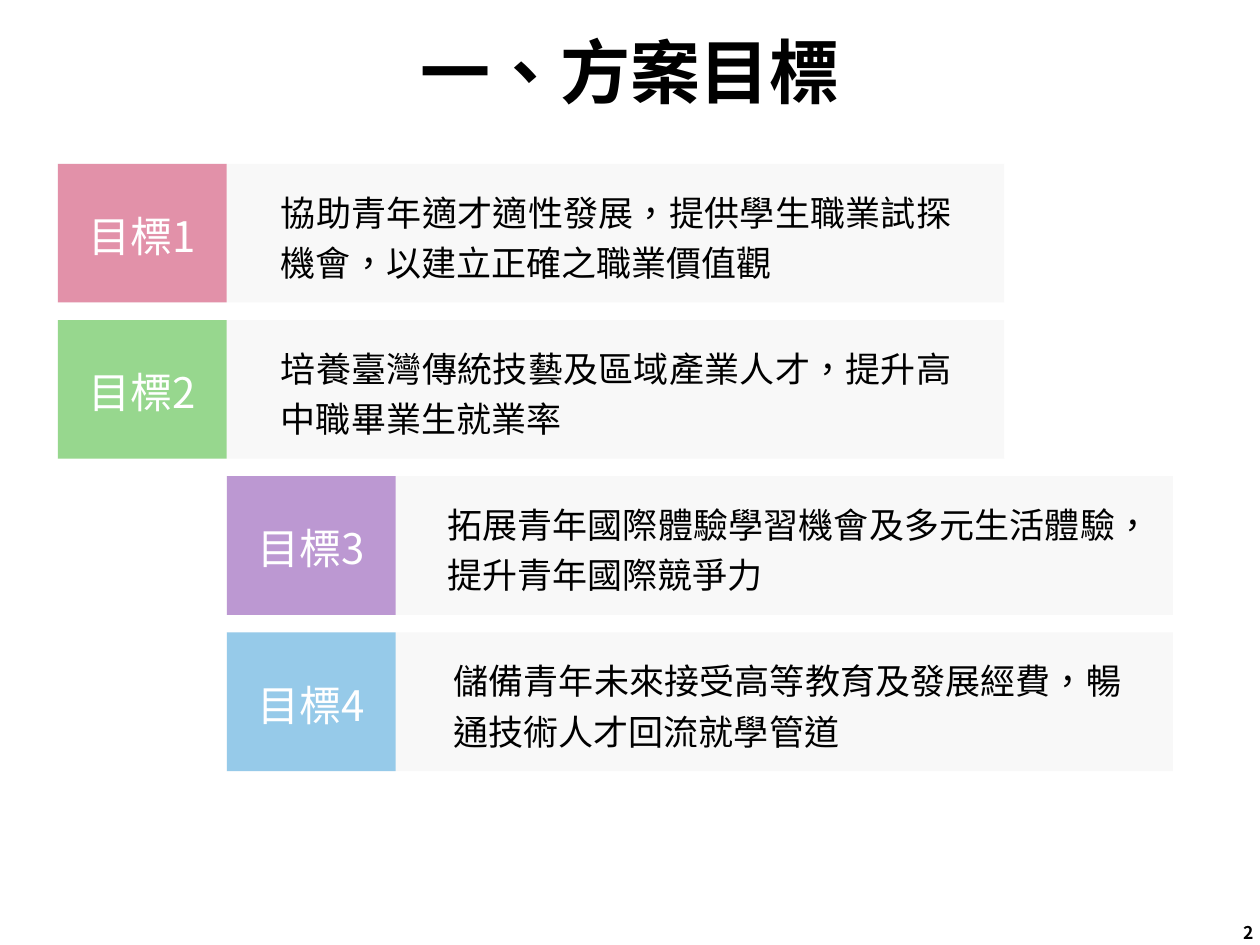
"""Build the slide that lists the four goals of the programme."""
from lxml.etree import SubElement
from pptx import Presentation
from pptx.dml.color import RGBColor
from pptx.enum.lang import MSO_LANGUAGE_ID as Language
from pptx.enum.shapes import MSO_SHAPE as Shape
from pptx.enum.text import MSO_ANCHOR as Anchor, PP_ALIGN as Align
from pptx.oxml.ns import qn
from pptx.util import Inches, Pt

FONT = "Noto Sans CJK SC"


def add_block(left, top, width, height, color):
    block = page.shapes.add_shape(
        Shape.RECTANGLE, Inches(left), Inches(top), Inches(width), Inches(height))
    block.shadow.inherit = False
    block.line.fill.background()
    block.fill.solid()
    block.fill.fore_color.rgb = RGBColor.from_string(color)
    tint = block.fill._xPr.find(qn("a:solidFill"))[0]
    SubElement(tint, qn("a:alpha"), val="50000")


def add_text(left, top, width, height, text, size, align, color="000000",
             spacing=1.0, bold=False, inset=0.1, anchor=Anchor.MIDDLE):
    box = page.shapes.add_textbox(
        Inches(left), Inches(top), Inches(width), Inches(height))
    frame = box.text_frame
    frame.word_wrap = True
    frame.vertical_anchor = anchor
    frame.margin_left = frame.margin_right = Inches(inset)
    para = frame.paragraphs[0]
    para.text = text
    para.alignment = align
    para.line_spacing = spacing
    para.font.size = Pt(size)
    para.font.bold = bold
    para.font.color.rgb = RGBColor.from_string(color)
    para.font.name = FONT
    SubElement(para._p.pPr.find(qn("a:defRPr")), qn("a:ea"), typeface=FONT)
    para.runs[0].font.language_id = Language.TRADITIONAL_CHINESE


deck = Presentation()
deck.slide_width, deck.slide_height = Inches(10), Inches(7.5)
page = deck.slides.add_slide(deck.slide_layouts[6])

add_text(0.69, 0.15, 8.62, 0.91, "一、方案目標", 40, Align.CENTER,
         spacing=0.9, bold=True)

goals = [
    (0.46, "CD2C5B", 5.72, 0.2, "協助青年適才適性發展，提供學生職業試探機會，以建立正確之職業價值觀"),
    (0.46, "38B726", 5.72, 0.2, "培養臺灣傳統技藝及區域產業人才，提升高中職畢業生就業率"),
    (1.8, "8239AD", 5.94, 0.18, "拓展青年國際體驗學習機會及多元生活體驗，提升青年國際競爭力"),
    (1.8, "359DDC", 5.76, 0.23, "儲備青年未來接受高等教育及發展經費，暢通技術人才回流就學管道"),
]
for index, (left, color, text_width, inset, goal) in enumerate(goals):
    top = 1.3 + 1.24 * index
    add_block(left, top, 7.51, 1.1, "F2F2F2")
    add_block(left, top, 1.34, 1.1, color)
    add_text(left + 1.57, top + 0.08, text_width, 0.94, goal, 20, Align.JUSTIFY,
             spacing=1.2, inset=inset)
    add_text(left, top + 0.28, 1.34, 0.55, f"目標{index + 1}", 24, Align.CENTER,
             color="FFFFFF", spacing=1.1, anchor=Anchor.TOP)

add_text(7.8, 7.2, 2.25, 0.4, "2", 10, Align.RIGHT, bold=True)

deck.save("out.pptx")
